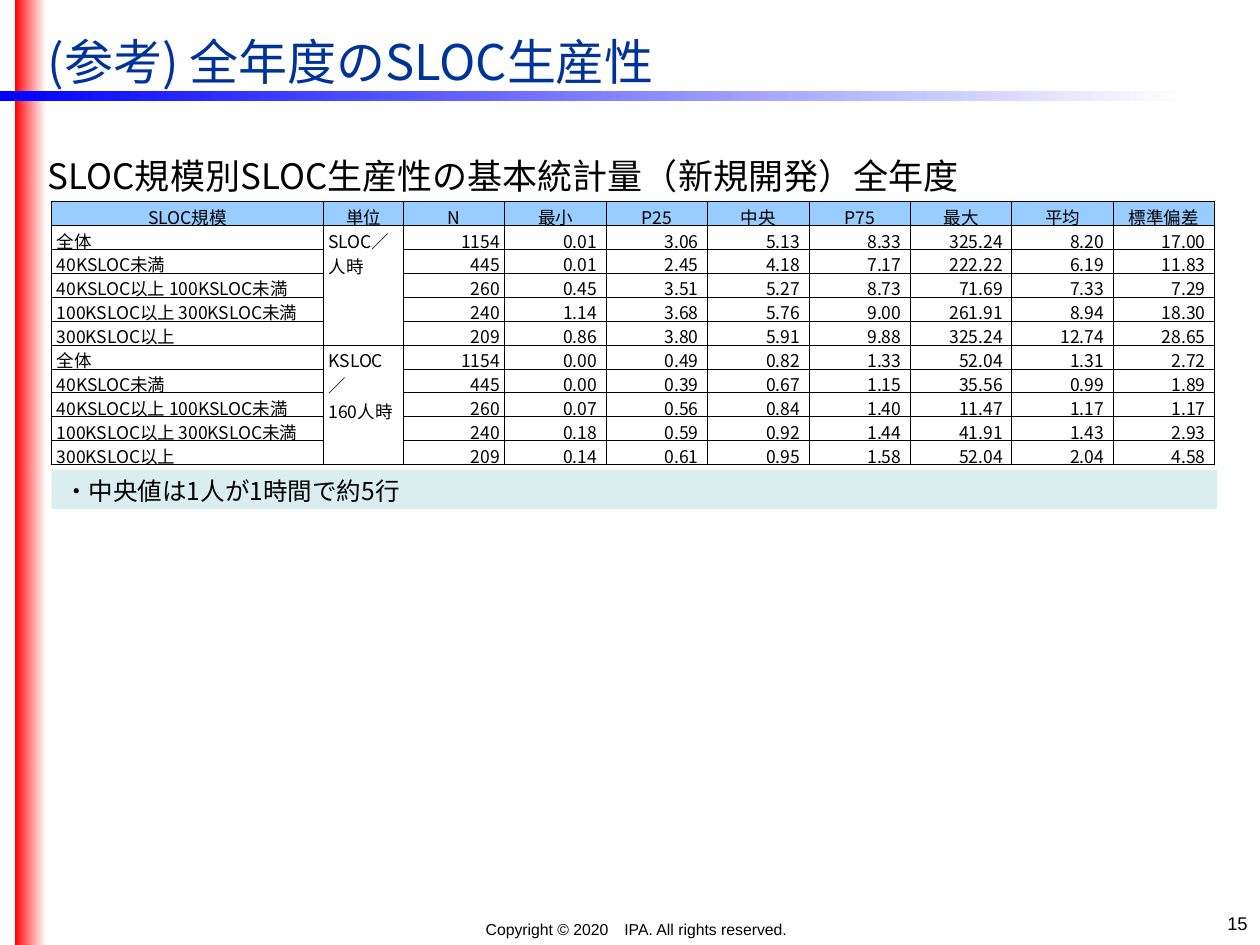
import copy
import pptx
import pptx.util
import pptx.dml.color
import pptx.enum.shapes
import pptx.enum.text
import pptx.oxml
import pptx.oxml.ns

Pt = pptx.util.Pt
ALIGN = pptx.enum.text.PP_ALIGN
ANCHOR = pptx.enum.text.MSO_ANCHOR
SANS, ARIAL = "Noto Sans CJK JP", "Arial"
COLORS = {"red": "FF0000", "blue": "0000FF", "white": "FFFFFF", "title": "003399",
          "black": "000000", "note": "DAEDEF", "header": "99CCFF"}

BARS = [((8.64, 0, 17.28, 540), "red", 84), ((0, 51.84, 677.52, 5.76), "blue", 100)]
TEXTS = [
    ("Copyright © 2020　IPA. All rights reserved.", (145.44, 522, 436.32, 18),
     9, ARIAL, "black", ALIGN.CENTER, ANCHOR.TOP),
    ("15", (552.24, 517.68, 167.76, 22.32), 10.5, ARIAL, "black", ALIGN.RIGHT, ANCHOR.TOP),
    ("(参考) 全年度のSLOC生産性", (20.16, 12.24, 657.36, 45.36),
     28, SANS, "title", ALIGN.LEFT, ANCHOR.MIDDLE),
    ("SLOC規模別SLOC生産性の基本統計量（新規開発）全年度", (20.16, 84.96, 570.24, 31.68),
     20, SANS, "black", ALIGN.LEFT, ANCHOR.TOP),
]
NOTE = "・中央値は1人が1時間で約5行"
NOTE_BOX = (29.52, 268.56, 666, 22.32)

HEADERS = ["SLOC規模", "単位", "N", "最小", "P25", "中央", "P75", "最大", "平均", "標準偏差"]
SIZES = [("全体", "1154"), ("40KSLOC未満", "445"), ("40KSLOC以上 100KSLOC未満", "260"),
         ("100KSLOC以上 300KSLOC未満", "240"), ("300KSLOC以上", "209")]
GROUPS = [
    ("SLOC／\n人時", [
        ("0.01", "3.06", "5.13", "8.33", "325.24", "8.20", "17.00"),
        ("0.01", "2.45", "4.18", "7.17", "222.22", "6.19", "11.83"),
        ("0.45", "3.51", "5.27", "8.73", "71.69", "7.33", "7.29"),
        ("1.14", "3.68", "5.76", "9.00", "261.91", "8.94", "18.30"),
        ("0.86", "3.80", "5.91", "9.88", "325.24", "12.74", "28.65")]),
    ("KSLOC／\n160人時", [
        ("0.00", "0.49", "0.82", "1.33", "52.04", "1.31", "2.72"),
        ("0.00", "0.39", "0.67", "1.15", "35.56", "0.99", "1.89"),
        ("0.07", "0.56", "0.84", "1.40", "11.47", "1.17", "1.17"),
        ("0.18", "0.59", "0.92", "1.44", "41.91", "1.43", "2.93"),
        ("0.14", "0.61", "0.95", "1.58", "52.04", "2.04", "4.58")]),
]
TABLE_LEFT, TABLE_TOP, ROW_HEIGHT = 29.52, 115.2, 13.68
COL_WIDTHS = [155.4, 45.6] + [57.95] * 8


def rgb(name):
    return pptx.dml.color.RGBColor.from_string(COLORS[name])


def write(tf, text, size, font, color, align, anchor):
    tf.vertical_anchor = anchor
    p = tf.paragraphs[0]
    p.text = text
    p.alignment = align
    for r in p.runs:
        for key, value in {"size": Pt(size), "name": font}.items():
            setattr(r.font, key, value)
        r.font.color.rgb = rgb(color)
        ea = pptx.oxml.ns.qn("a:ea")
        r.font._element.makeelement(ea)
        r.font._element.append(r.font._element.makeelement(ea, {"typeface": font}))
    for br in p._p.findall(pptx.oxml.ns.qn("a:br")):
        br.append(copy.deepcopy(p.runs[0]._r.rPr))


def add_rect(s, box):
    sp = s.shapes.add_shape(pptx.enum.shapes.MSO_SHAPE.RECTANGLE, *map(Pt, box))
    sp.shadow.inherit = False
    sp.line.fill.background()
    return sp


def add_bar(s, box, color, alpha):
    fill = add_rect(s, box).fill
    fill.gradient()
    fill.gradient_angle = 0
    for stop, name in zip(fill.gradient_stops, (color, "white")):
        stop.color.rgb = rgb(name)
    if alpha < 100:
        clr = fill.gradient_stops[1]._gs[0]
        clr.append(clr.makeelement(pptx.oxml.ns.qn("a:alpha"), {"val": str(alpha * 1000)}))


def add_borders(cell):
    tcPr = cell._tc.get_or_add_tcPr()
    for side in ("lnL", "lnR", "lnT", "lnB"):
        tcPr.append(pptx.oxml.parse_xml(
            f'<a:{side} {pptx.oxml.ns.nsdecls("a")} w="{Pt(0.5)}"><a:solidFill>'
            f'<a:srgbClr val="{COLORS["black"]}"/></a:solidFill></a:{side}>'))


def add_stats_table(s):
    rows = [HEADERS]
    for unit, stats in GROUPS:
        for i, (size, values) in enumerate(zip(SIZES, stats)):
            rows.append([size[0], "" if i else unit, size[1], *values])
    table = s.shapes.add_table(len(rows), len(HEADERS), Pt(TABLE_LEFT), Pt(TABLE_TOP),
                               Pt(sum(COL_WIDTHS)), Pt(ROW_HEIGHT * len(rows))).table
    table.first_row = table.horz_banding = False
    for col, width in zip(table.columns, COL_WIDTHS):
        col.width = Pt(width)
    for i, row in enumerate(rows):
        table.rows[i].height = Pt(ROW_HEIGHT)
        for j, text in enumerate(row):
            cell = table.cell(i, j)
            right = 5.2 if i and j > 2 else 2.88
            for key, value in {"left": 2.88, "top": 1.44, "right": right, "bottom": 0}.items():
                setattr(cell, f"margin_{key}", Pt(value))
            add_borders(cell)
            if i == 0:
                cell.fill.solid()
                cell.fill.fore_color.rgb = rgb("header")
                align = ALIGN.CENTER
                anchor = ANCHOR.BOTTOM if j in (0, 1, 4) else ANCHOR.MIDDLE
            else:
                cell.fill.background()
                align = ALIGN.RIGHT if j > 1 else ALIGN.LEFT
                anchor = ANCHOR.TOP if j == 1 else ANCHOR.BOTTOM
            write(cell.text_frame, text, 10, SANS, "black", align, anchor)
            cell.vertical_anchor = anchor
    for g in range(len(GROUPS)):
        top = 1 + g * len(SIZES)
        table.cell(top, 1).merge(table.cell(top + len(SIZES) - 1, 1))


def main():
    prs = pptx.Presentation()
    prs.slide_width, prs.slide_height = Pt(720), Pt(540)
    s = prs.slides.add_slide(prs.slide_layouts[6])
    for bar in BARS:
        add_bar(s, *bar)
    for text, box, *style in TEXTS:
        tf = s.shapes.add_textbox(*map(Pt, box)).text_frame
        tf.word_wrap = True
        write(tf, text, *style)
    sp = add_rect(s, NOTE_BOX)
    sp.fill.solid()
    sp.fill.fore_color.rgb = rgb("note")
    write(sp.text_frame, NOTE, 14, SANS, "black", ALIGN.LEFT, ANCHOR.TOP)
    add_stats_table(s)
    prs.save("out.pptx")


if __name__ == "__main__":
    main()
